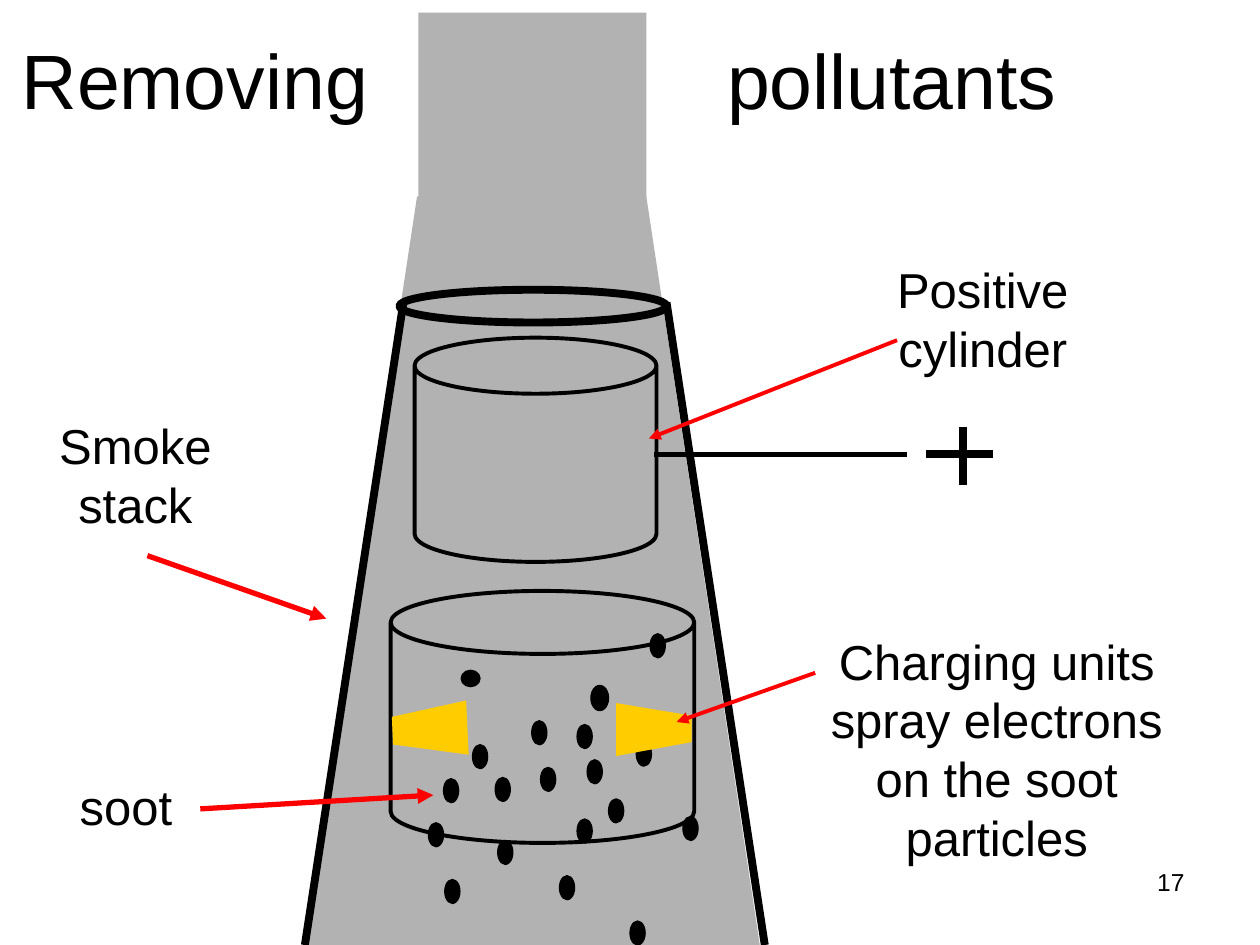
from pptx import Presentation
from pptx.dml.color import RGBColor as Rgb
from pptx.enum.shapes import MSO_CONNECTOR as Conn, MSO_SHAPE as Kind
from pptx.enum.text import MSO_ANCHOR as Anchor, MSO_AUTO_SIZE as Auto, PP_ALIGN as Align
from pptx.oxml.ns import qn
from pptx.util import Inches, Pt
from lxml.etree import SubElement as Sub

HEX = {"ink": "000000", "smoke": "B2B2B2", "unit": "FFCC00", "arrow": "FF0000"}
FONT = "Arial"
DOT = (0.12, 0.19)
SOOT = [
    (4.29, 6.09), (4.66, 6.03), (3.93, 6.17), (4.22, 5.72), (3.53, 6.98),
    (3.95, 6.67), (4.58, 6.5), (3.75, 5.91), (5.05, 5.89), (4.83, 6.34),
    (4.44, 6.95), (3.52, 6.18), (3.4, 6.53), (4.58, 5.75), (5.42, 6.48),
    (5, 7.31), (5.16, 5.03),
]
SMOKE = [(6.03, 7.5), (5.13, 1.56), (3.31, 1.56), (2.41, 7.5)]
UNITS = [
    [(3.7, 5.56), (3.11, 5.69), (3.12, 5.91), (3.72, 5.99)],
    [(4.89, 6), (5.49, 5.89), (5.49, 5.68), (4.89, 5.58)],
]
LABELS = [
    ("Smoke\nstack", (0.36, 3.25, 1.43, 1.04)),
    ("Charging units\nspray electrons\non the soot\nparticles", (6.49, 4.96, 2.84, 1.97)),
    ("Positive\ncylinder", (7.02, 2.01, 1.56, 1.03)),
    ("soot", (0.53, 6.11, 0.94, 0.57)),
]
WALLS = [((3.2, 2.41), (2.42, 7.5)), ((5.29, 2.4), (6.07, 7.5))]
PLUS = [((7.64, 3.39), (7.64, 3.85)), ((7.35, 3.6), (7.88, 3.6))]
ARROWS = [
    ((1.17, 4.41), (2.59, 4.91), 3),
    ((7.12, 2.7), (5.15, 3.48), 2.25),
    ((1.59, 6.42), (3.44, 6.31), 3),
    ((6.47, 5.34), (5.37, 5.73), 2.25),
]


def scale(vals):
    """Turn numbers into inch lengths."""
    return [Inches(val) for val in vals]


def paint(shape, fill=None, width=None):
    """Set the fill and outline of a shape."""
    shape.shadow.inherit = False
    if fill:
        shape.fill.solid()
        shape.fill.fore_color.rgb = Rgb.from_string(HEX[fill])
    else:
        shape.fill.background()
    if width:
        shape.line.color.rgb = Rgb.from_string(HEX["ink"])
        shape.line.width = Pt(width)
    else:
        shape.line.fill.background()


def add_form(slide, kind, box, fill=None, width=None):
    """Add a preset shape."""
    paint(slide.shapes.add_shape(kind, *scale(box)), fill, width)


def add_poly(slide, points, fill):
    """Add a closed outline through the points."""
    first, *rest = [scale(point) for point in points]
    pen = slide.shapes.build_freeform(*first)
    pen.add_line_segments(rest, close=True)
    paint(pen.convert_to_shape(), fill)


def add_line(slide, start, end, width, color="ink", head=False):
    """Add a straight line, with an arrowhead if asked."""
    line = slide.shapes.add_connector(Conn.STRAIGHT, *scale(start + end))
    line.line.color.rgb = Rgb.from_string(HEX[color])
    line.line.width = Pt(width)
    if head:
        Sub(line.line._get_or_add_ln(), qn("a:tailEnd"), type="triangle")
    Sub(line._element.spPr, qn("a:effectLst"))


def set_type(frame, size, align):
    """Format all the text in a frame."""
    for para in frame.paragraphs:
        para.alignment = align
        for run in para.runs:
            run.font.name = FONT
            run.font.size = Pt(size)
            run.font.color.rgb = Rgb.from_string(HEX["ink"])


def add_label(slide, text, box, size=28, align=Align.CENTER, wrap=False):
    """Add a text box."""
    frame = slide.shapes.add_textbox(*scale(box)).text_frame
    frame.word_wrap = wrap
    frame.auto_size = Auto.NONE if wrap else Auto.SHAPE_TO_FIT_TEXT
    frame.text = text
    set_type(frame, size, align)


def set_title(slide):
    """Place the title, split by a tab stop around the smoke."""
    title = slide.shapes.title
    title.left, title.top, title.width, title.height = scale((0.07, 0, 9.93, 1.25))
    frame = title.text_frame
    frame.text = "Removing\tpollutants"
    frame.vertical_anchor = Anchor.MIDDLE
    frame.auto_size = Auto.NONE
    set_type(frame, 44, Align.LEFT)
    tabs = Sub(frame.paragraphs[0]._p.get_or_add_pPr(), qn("a:tabLst"))
    Sub(tabs, qn("a:tab"), pos=str(Inches(5.6)), algn="l")


def add_stack(slide):
    """Draw the smoke and the stack around it."""
    add_form(slide, Kind.RECTANGLE, (3.32, 0.1, 1.81, 1.49), "smoke")
    add_poly(slide, SMOKE, "smoke")
    for start, end in WALLS:
        add_line(slide, start, end, 4.5)
    add_form(slide, Kind.OVAL, (3.17, 2.3, 2.12, 0.26), width=4.5)


def add_soot(slide):
    """Scatter the soot particles."""
    boxes = [spot + DOT for spot in SOOT]
    boxes += [(3.66, 5.32, 0.15, 0.13), (4.69, 5.44, 0.14, 0.2)]
    for box in boxes:
        add_form(slide, Kind.OVAL, box, "ink", 0.75)


def add_units(slide):
    """Draw both cylinders, the charging units and the plus sign."""
    for box in [(3.29, 2.68, 1.92, 1.78), (3.1, 4.69, 2.41, 2)]:
        add_form(slide, Kind.CAN, box, width=2.25)
    for points in UNITS:
        add_poly(slide, points, "unit")
    add_line(slide, (5.19, 3.61), (7.2, 3.61), 3)
    for start, end in PLUS:
        add_line(slide, start, end, 4.5)


def main():
    """Build the slide and save it."""
    deck = Presentation()
    deck.slide_width, deck.slide_height = scale((10, 7.5))
    slide = deck.slides.add_slide(deck.slide_layouts[5])
    set_title(slide)
    add_stack(slide)
    add_soot(slide)
    add_units(slide)
    for text, box in LABELS:
        add_label(slide, text, box)
    for start, end, width in ARROWS:
        add_line(slide, start, end, width, "arrow", True)
    add_label(slide, "17", (7.17, 6.83, 2.33, 0.52), 14, Align.RIGHT, True)
    deck.save("out.pptx")


if __name__ == "__main__":
    main()
